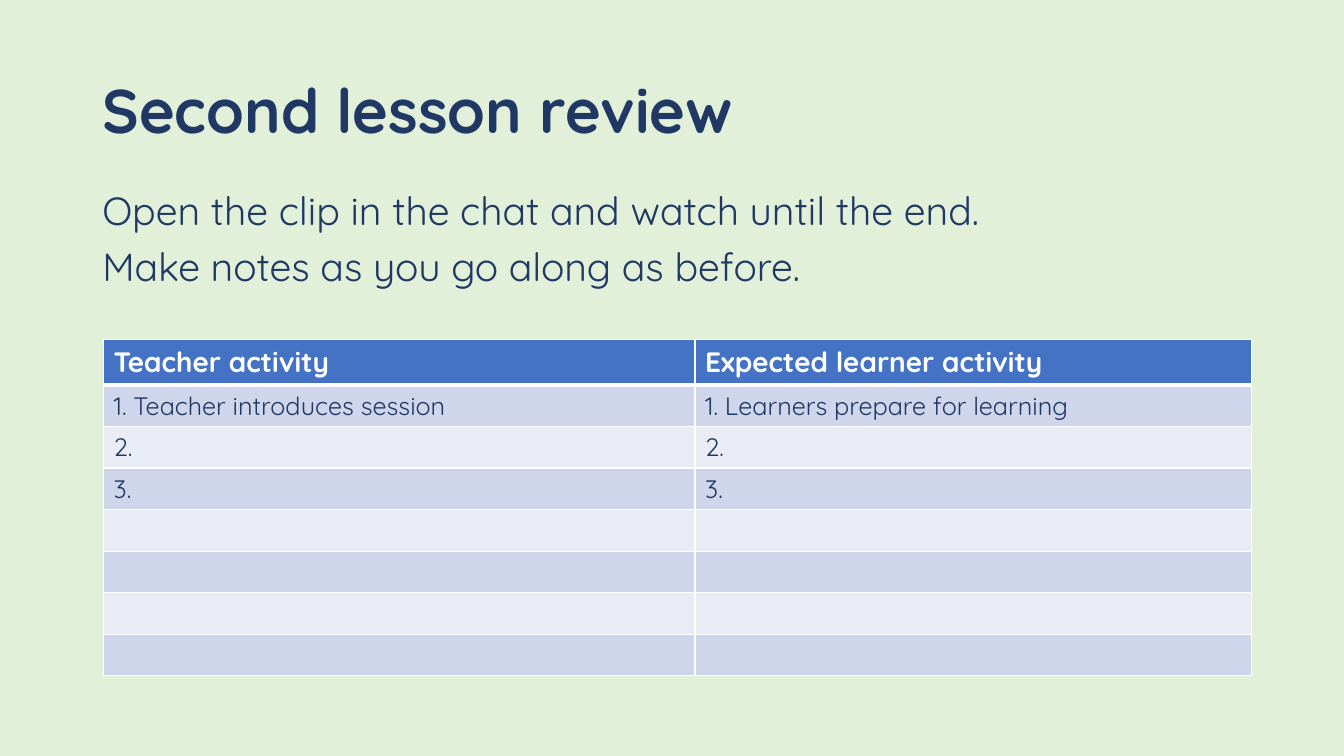
from lxml.etree import SubElement
from pptx import Presentation
from pptx.dml.color import RGBColor
from pptx.enum.text import MSO_ANCHOR, PP_ALIGN
from pptx.oxml.ns import qn
from pptx.util import Pt

NAVY, WHITE, BLUE = "203864", "FFFFFF", "4472C4"
BANDS = ("CFD5EA", "E9EBF5")


def color(value):
    return RGBColor.from_string(value)


class LessonSlide:
    font_name = "Quicksand"

    def __init__(self, presentation, background):
        self.slide = presentation.slides.add_slide(presentation.slide_layouts[5])
        self.slide.background.fill.solid()
        self.slide.background.fill.fore_color.rgb = color(background)

    def style(self, paragraph, size, ink=NAVY, bold=False):
        paragraph.alignment = PP_ALIGN.LEFT
        paragraph.font.name = self.font_name
        paragraph.font.size = Pt(size)
        paragraph.font.bold = bold
        paragraph.font.color.rgb = color(ink)

    def title(self, wording, left, top, width, height):
        heading = self.slide.shapes.title
        heading.left, heading.top = Pt(left), Pt(top)
        heading.width, heading.height = Pt(width), Pt(height)
        heading.text_frame.text = wording
        heading.text_frame.vertical_anchor = MSO_ANCHOR.MIDDLE
        paragraph = heading.text_frame.paragraphs[0]
        paragraph.line_spacing = 0.9
        self.style(paragraph, 44, bold=True)

    def text(self, lines, left, top, width, height):
        box = self.slide.shapes.add_textbox(Pt(left), Pt(top), Pt(width), Pt(height))
        frame = box.text_frame
        frame.word_wrap = True
        frame.text = "\n".join(lines)
        for paragraph in frame.paragraphs:
            paragraph.line_spacing = 0.9
            paragraph.space_before = Pt(10)
            self.style(paragraph, 28)

    def border(self, cell, side, width):
        line = SubElement(cell._tc.get_or_add_tcPr(), qn(f"a:{side}"), w=str(Pt(width)))
        fill = SubElement(line, qn("a:solidFill"))
        SubElement(fill, qn("a:srgbClr"), val=WHITE)

    def cell(self, cell, wording, row):
        is_header = row == 0
        for side in ("lnL", "lnR", "lnT", "lnB"):
            meets_header = (row, side) in ((0, "lnB"), (1, "lnT"))
            self.border(cell, side, 3 if meets_header else 1)
        cell.fill.solid()
        cell.fill.fore_color.rgb = color(BLUE if is_header else BANDS[(row - 1) % 2])
        cell.text = wording
        self.style(cell.text_frame.paragraphs[0], 20 if is_header else 18,
                   WHITE if is_header else NAVY, is_header)

    def table(self, rows, left, top, widths, header_height, row_height):
        height = header_height + row_height * (len(rows) - 1)
        table = self.slide.shapes.add_table(
            len(rows), len(widths), Pt(left), Pt(top), Pt(sum(widths)), Pt(height)).table
        for column, width in zip(table.columns, widths):
            column.width = Pt(width)
        for index, wordings in enumerate(rows):
            table.rows[index].height = Pt(row_height if index else header_height)
            for column, wording in enumerate(wordings):
                self.cell(table.cell(index, column), wording, index)


def main():
    presentation = Presentation()
    presentation.slide_width, presentation.slide_height = Pt(960), Pt(540)
    review = LessonSlide(presentation, "E2F0D9")
    review.title("Second lesson review", 66, 28.75, 828, 104.4)
    review.text(("Open the clip in the chat and watch until the end.",
                 "Make notes as you go along as before."), 66, 133, 828, 90)
    activities = [
        ("Teacher activity", "Expected learner activity"),
        ("1. Teacher introduces session", "1. Learners prepare for learning"),
        ("2.", "2."),
        ("3.", "3."),
    ] + [("", "")] * 4
    review.table(activities, 74, 242.75, (422.5, 397.5), 32.2, 29.7)
    presentation.save("out.pptx")


if __name__ == "__main__":
    main()
